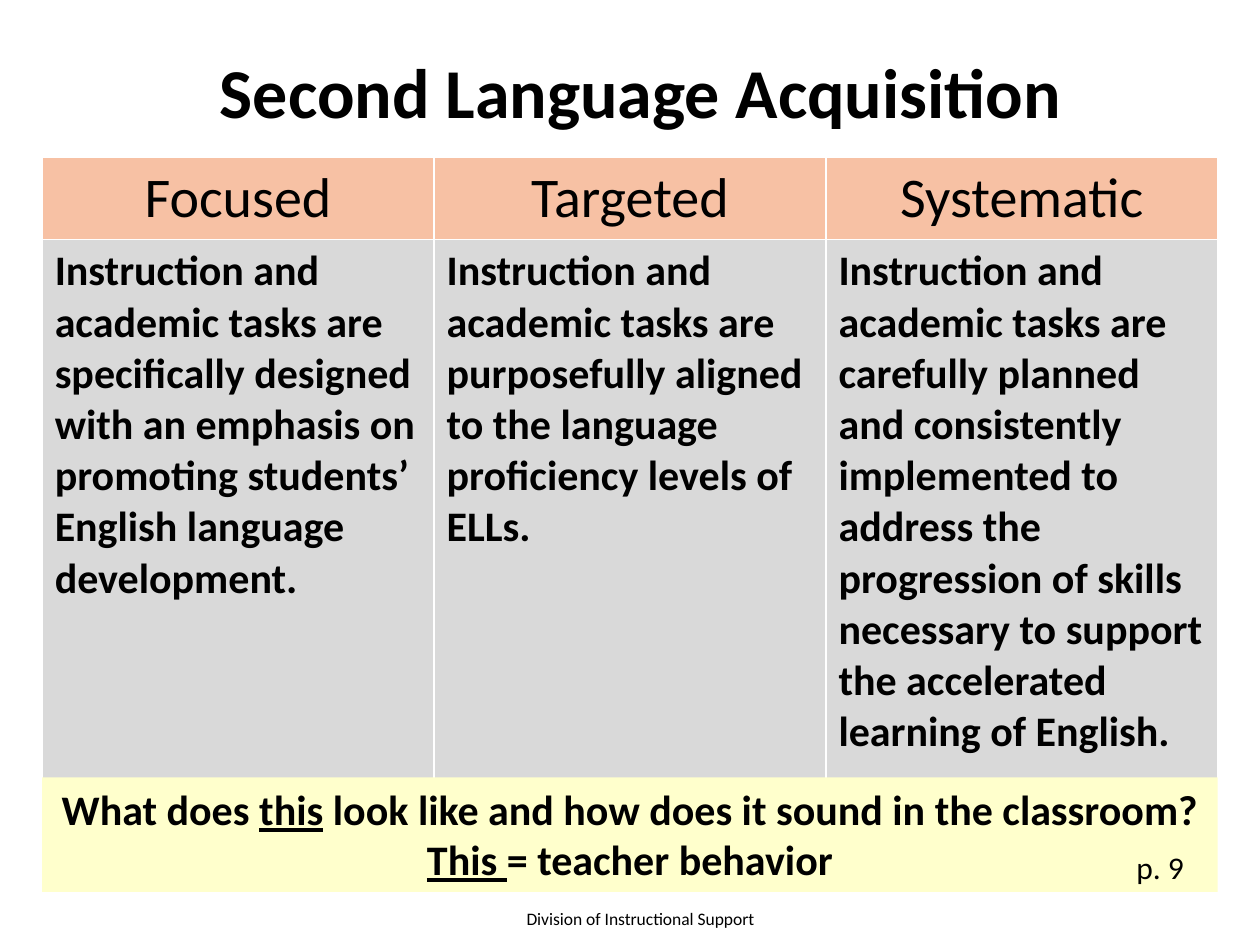
"""Build a slide on three qualities of second language acquisition instruction."""
from lxml import etree
from pptx import Presentation
from pptx.dml.color import RGBColor
from pptx.enum.shapes import MSO_SHAPE
from pptx.enum.text import MSO_ANCHOR, PP_ALIGN
from pptx.oxml import parse_xml
from pptx.util import Cm, Pt

CENTER, LEFT = PP_ALIGN.CENTER, PP_ALIGN.LEFT
TOP, MIDDLE = MSO_ANCHOR.TOP, MSO_ANCHOR.MIDDLE
RECTANGLE = MSO_SHAPE.RECTANGLE
NS = "http://schemas.openxmlformats.org/drawingml/2006/main"
BLACK, WHITE, PEACH, GRAY, CREAM = "000000", "FFFFFF", "F7C1A4", "D9D9D9", "FFFFCC"


def rgb(value):
    """Turn a hex string into a colour."""
    return RGBColor.from_string(value)


def style(p, size, bold=False, align=LEFT):
    """Format a paragraph and all its runs."""
    p.alignment = align
    for r in p.runs:
        r.font.name = "Calibri"
        r.font.size = Pt(size)
        r.font.bold = bold
        r.font.color.rgb = rgb(BLACK)


prs = Presentation()
prs.slide_width, prs.slide_height = Cm(25.4), Cm(19.05)
s = prs.slides.add_slide(prs.slide_layouts[5])

title = s.shapes.title
title.left, title.top, title.width, title.height = Cm(1.48), Cm(0.85), Cm(22.86), Cm(2.5)
tf = title.text_frame
tf.text = "Second Language Acquisition"
tf.vertical_anchor = TOP
style(tf.paragraphs[0], 40, True, CENTER)

columns = [
    ("Focused", "Instruction and academic tasks are specifically designed with an emphasis "
     "on promoting students’ English language development."),
    ("Targeted", "Instruction and academic tasks are purposefully aligned to the language "
     "proficiency levels of ELLs."),
    ("Systematic", "Instruction and academic tasks are carefully planned and consistently "
     "implemented to address the progression of skills necessary to support the "
     "accelerated learning of English."),
]
row_styles = [(PEACH, 32, False, CENTER), (GRAY, 24, True, LEFT)]
table = s.shapes.add_table(2, 3, Cm(0.85), Cm(3.18), Cm(23.7), Cm(12.95)).table
table.rows[0].height, table.rows[1].height = Cm(1.65), Cm(11.3)
for col, texts in enumerate(columns):
    table.columns[col].width = Cm(7.9)
    for row, (fill, size, bold, align) in enumerate(row_styles):
        cell = table.cell(row, col)
        cell.text = texts[row]
        style(cell.text_frame.paragraphs[0], size, bold, align)
        cell.fill.solid()
        cell.fill.fore_color.rgb = rgb(fill)
        tcPr = cell._tc.get_or_add_tcPr()
        for i, side in enumerate(("lnL", "lnR", "lnT", "lnB")):
            line = parse_xml(f'<a:{side} xmlns:a="{NS}" w="{Pt(1)}"/>')
            solid = etree.SubElement(line, f"{{{NS}}}solidFill")
            etree.SubElement(solid, f"{{{NS}}}srgbClr", val=WHITE)
            tcPr.insert(i, line)

question = s.shapes.add_shape(RECTANGLE, Cm(0.85), Cm(15.67), Cm(23.7), Cm(2.31))
question.shadow.inherit = False
question.fill.solid()
question.fill.fore_color.rgb = rgb(CREAM)
question.line.fill.background()
tf = question.text_frame
tf.word_wrap = True
tf.vertical_anchor = TOP
p = tf.paragraphs[0]
for text, underline in [("What does ", False), ("this", True),
                        (" look like and how does it sound in the classroom? ", False),
                        ("This ", True), ("= teacher behavior", False)]:
    r = p.add_run()
    r.text = text
    r.font.underline = underline
style(p, 24, True, CENTER)

labels = [
    ("Division of Instructional Support", 9.1, 17.98, 7.62, 1.07, 10, CENTER, MIDDLE, True),
    ("p. 9", 22.66, 16.97, 1.47, 1.02, 18, LEFT, TOP, False),
]
for text, left, top, width, height, size, align, anchor, wrap in labels:
    tf = s.shapes.add_textbox(Cm(left), Cm(top), Cm(width), Cm(height)).text_frame
    tf.text = text
    tf.word_wrap = wrap
    tf.vertical_anchor = anchor
    style(tf.paragraphs[0], size, align=align)

prs.save("out.pptx")
